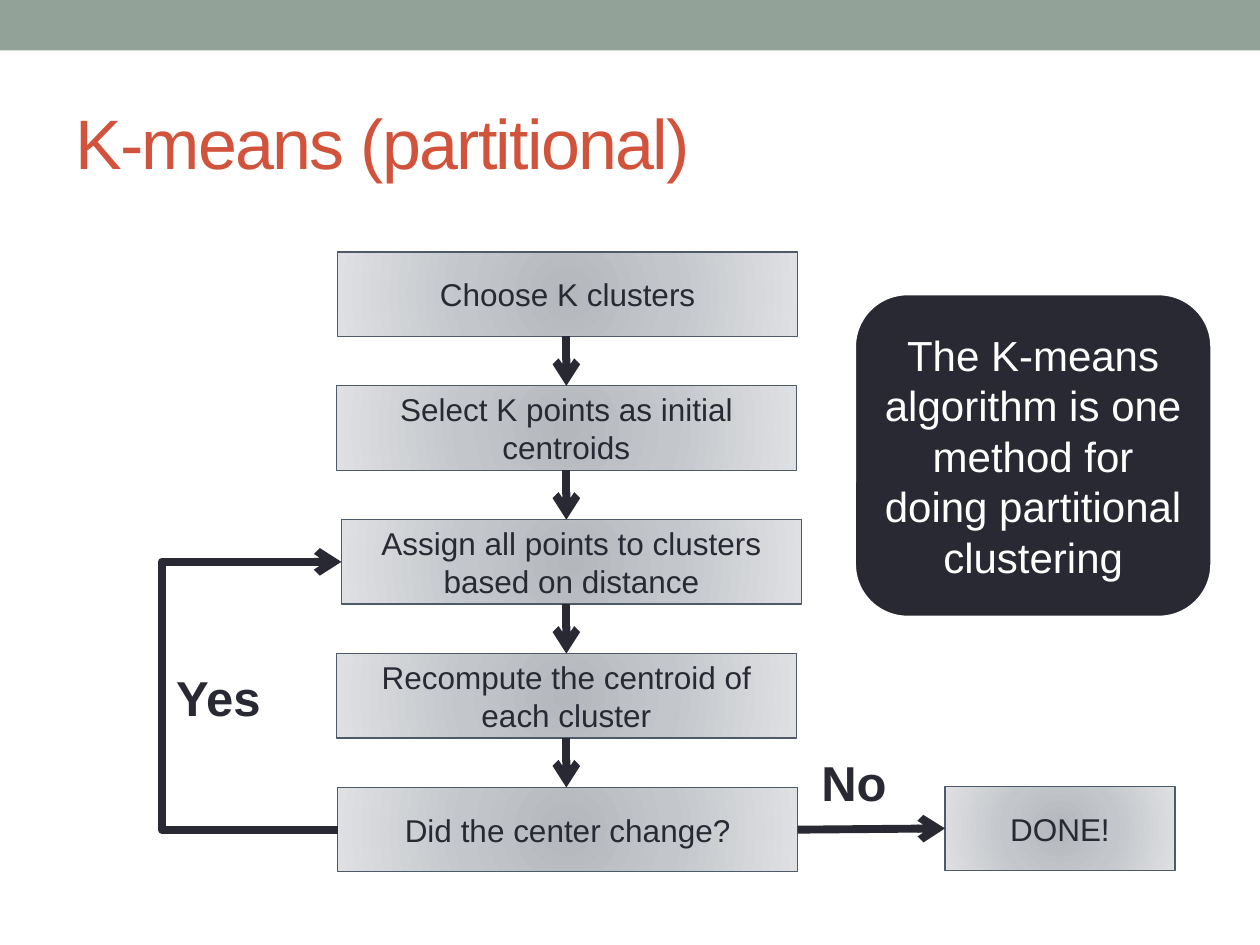
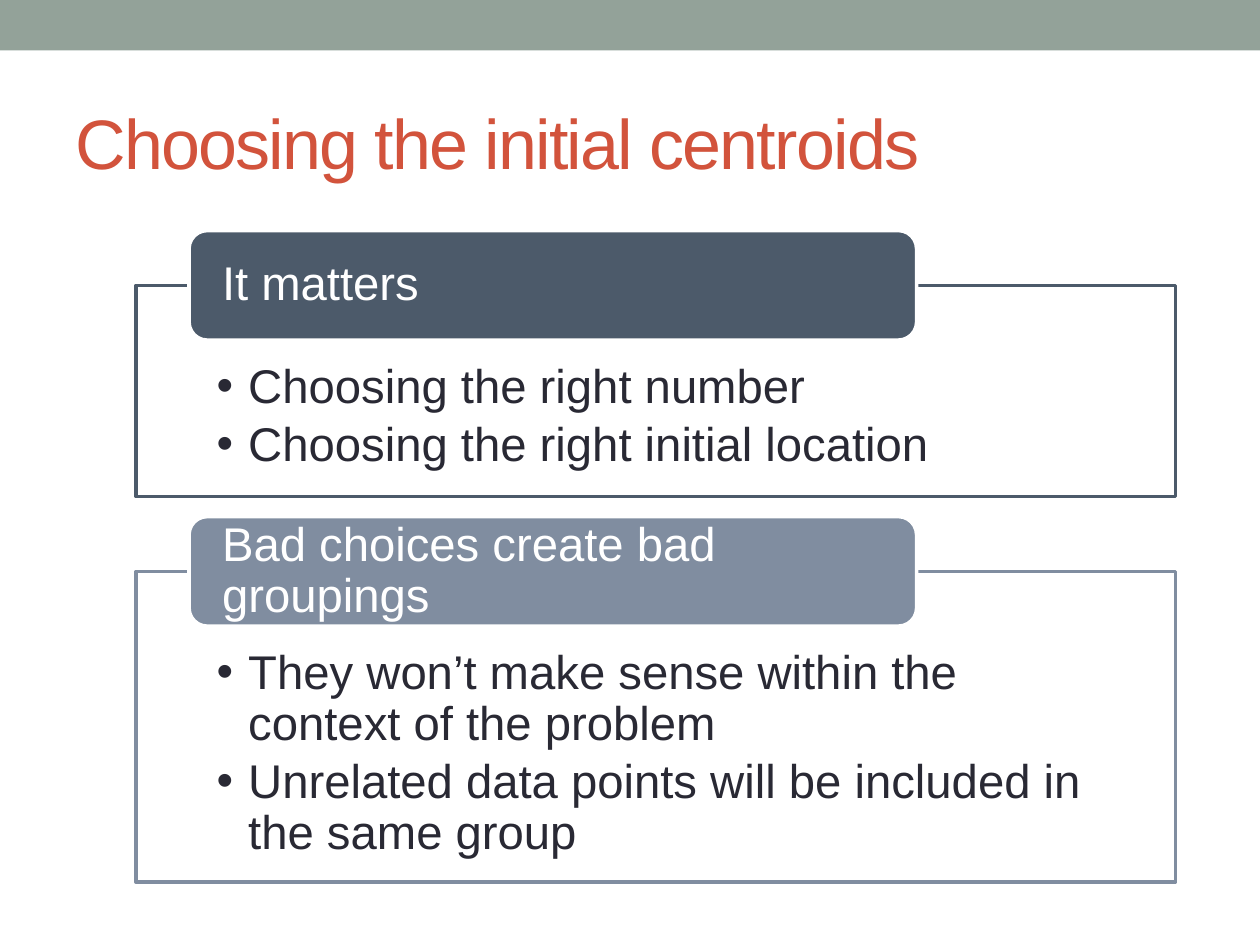
from lxml import etree
from pptx import Presentation
from pptx.dml.color import RGBColor
from pptx.enum.shapes import MSO_CONNECTOR, MSO_SHAPE
from pptx.enum.text import MSO_ANCHOR, PP_ALIGN
from pptx.oxml import parse_xml
from pptx.oxml.ns import nsdecls, qn
from pptx.util import Inches, Pt

RECT, ROUND = MSO_SHAPE.RECTANGLE, MSO_SHAPE.ROUNDED_RECTANGLE
STRAIGHT, ELBOW = MSO_CONNECTOR.STRAIGHT, MSO_CONNECTOR.ELBOW
MIDDLE, TOP = MSO_ANCHOR.MIDDLE, MSO_ANCHOR.TOP
LEFT, CENTER = PP_ALIGN.LEFT, PP_ALIGN.CENTER

WHITE = RGBColor(0xFF, 0xFF, 0xFF)
SAGE = RGBColor(0x93, 0xA2, 0x99)
RUST = RGBColor(0xD2, 0x53, 0x3C)
INK = RGBColor(0x29, 0x29, 0x34)
SLATE = RGBColor(0x4C, 0x5A, 0x6A)
MIST = RGBColor(0x80, 0x8D, 0xA0)
GLOW = [(0, RGBColor(0xB4, 0xB7, 0xBC)), (45, RGBColor(0xC3, 0xC7, 0xCB)),
        (100, RGBColor(0xDF, 0xE0, 0xE3))]

FONT = "Arial"
WIDE, HIGH = Inches(10), Inches(7.5)
COL, ROW = WIDE / 10, HIGH / 7.5  # the grid: 10 columns, 7.5 rows


def place(x, y, *size):
    """Turn columns and rows into slide lengths."""
    spot = (x, y, *size)
    return [round(n * (ROW if i % 2 else COL)) for i, n in enumerate(spot)]


def write(shape, lines, size, color, align=LEFT, anchor=MIDDLE, bold=False):
    frame = shape.text_frame
    frame.word_wrap = True
    frame.vertical_anchor = anchor
    frame.text = "\n".join(lines)
    for para in frame.paragraphs:
        para.alignment = align
        for run in para.runs:
            font = run.font
            font.name, font.size, font.bold = FONT, Pt(size), bold
            font.color.rgb = color
    return frame


def label(slide, box, text, size, color, **style):
    shape = slide.shapes.add_textbox(*place(*box))
    return write(shape, [text], size, color, **style)


def block(slide, kind, box, fill, edge=None, width=0):
    shape = slide.shapes.add_shape(kind, *place(*box))
    shape.shadow.inherit = False
    shape.fill.solid()
    shape.fill.fore_color.rgb = fill
    if edge is None:
        shape.line.fill.background()
    else:
        shape.line.color.rgb = edge
        shape.line.width = Pt(width)
    return shape


def glow(shape):
    """Fill a shape with grey rings, darkest at its centre."""
    stops = "".join(f'<a:gs pos="{at * 1000}"><a:srgbClr val="{tone}"/></a:gs>'
                    for at, tone in GLOW)
    grad = parse_xml(
        f'<a:gradFill {nsdecls("a")} rotWithShape="1"><a:gsLst>{stops}</a:gsLst>'
        '<a:path path="circle"><a:fillToRect l="100000" t="100000" '
        'r="100000" b="100000"/></a:path></a:gradFill>')
    solid = shape.fill._xPr.find(qn("a:solidFill"))
    solid.getparent().replace(solid, grad)


def step(slide, box, text):
    shape = block(slide, RECT, box, WHITE, SLATE, 0.75)
    glow(shape)
    write(shape, [text], 18, INK, CENTER)
    return shape


def arrow(slide, start, end, kind=STRAIGHT):
    line = slide.shapes.add_connector(kind, *place(*start), *place(*end))
    line.line.color.rgb = INK
    line.line.width = Pt(4.5)
    etree.SubElement(line.line._get_or_add_ln(), qn("a:tailEnd"), type="arrow")
    etree.SubElement(line._element.spPr, qn("a:effectLst"))
    return line


def join(slide, first, side, last, goal, kind=STRAIGHT):
    """Draw an arrow from a side of one shape to a side of another."""
    line = arrow(slide, (0, 0), (1, 1), kind)
    line.begin_connect(first, side)
    line.end_connect(last, goal)
    return line


def loop(slide, first, last, turn):
    """Lead back from first to last, turning at the given column."""
    line = join(slide, first, 1, last, 1, ELBOW)
    bend = (turn * COL - line.begin_x) / (line.end_x - line.begin_x)
    guides = line._element.spPr.find(qn("a:prstGeom")).get_or_add_avLst()
    etree.SubElement(guides, qn("a:gd"), name="adj1",
                     fmla=f"val {round(bend * 100000)}")


def base(deck, title):
    """Start a slide with its band and title."""
    slide = deck.slides.add_slide(deck.slide_layouts[6])
    block(slide, RECT, (0, 0, 10, 0.4), SAGE)
    frame = label(slide, (0.5, 0.58, 9, 1.08), title, 40, RUST)
    frame.paragraphs[0].runs[0].font._element.set("spc", "-100")
    return slide


def flow(slide, box, steps):
    """Stack the steps evenly in the box, with arrows between them."""
    x, y, w, h = box
    tall = 0.67
    pitch = (h - tall) / (len(steps) - 1)
    shapes = []
    for i, (shift, text) in enumerate(steps):
        top = y + i * pitch
        shapes.append(step(slide, (x + shift, top, w, tall), text))
        if i:
            mid = x + w / 2
            arrow(slide, (mid, top - pitch + tall), (mid, top))
    done = step(slide, (x + w + 1.18, y + h - tall - 0.01, w / 2, tall), "DONE!")
    join(slide, shapes[-1], 3, done, 1)
    loop(slide, shapes[-1], shapes[2], x - 1.39)
    for text, dx, dy, wide in (("Yes", -1.37, 3.25, 0.88), ("No", 3.75, 3.92, 0.73)):
        frame = label(slide, (x + dx, y + dy, wide, 0.57), text, 28, INK,
                      anchor=TOP, bold=True)
        frame.word_wrap = False


def remark(slide, box, text):
    shape = block(slide, ROUND, box, INK, WHITE, 3.5)
    write(shape, [text], 24, WHITE, CENTER)


def panel(slide, box, tone, head, points):
    """Outline a bullet list, with its heading laid over the top edge."""
    x, y, w, h = box
    tab = 0.87
    frame = block(slide, RECT, (x, y + tab / 2, w, h - tab / 2), WHITE, tone, 2.08)
    body = write(frame, points, 27, INK, anchor=TOP)
    body.margin_left = body.margin_right = Inches(0.64)
    body.margin_top, body.margin_bottom = Inches(0.61), Inches(0.21)
    for para in body.paragraphs:
        para.line_spacing = 0.9
        para.space_after = Pt(4)
        props = para._p.get_or_add_pPr()
        props.set("marL", str(Inches(0.25)))
        props.set("indent", str(-Inches(0.25)))
        etree.SubElement(props, qn("a:buFont"), typeface=FONT)
        etree.SubElement(props, qn("a:buChar"), char="•")
    cap = block(slide, ROUND, (x + 0.42, y, w * 0.7, tab), tone, WHITE, 2.08)
    text = write(cap, [head], 27, WHITE)
    text.margin_left = text.margin_right = Inches(0.22)
    text.margin_top = text.margin_bottom = 0
    text.paragraphs[0].line_spacing = 0.9


def means(deck):
    slide = base(deck, "K-means (partitional)")
    flow(slide, (2.67, 2, 3.65, 4.92), [
        (0.01, "Choose K clusters"),
        (0, "Select K points as initial centroids"),
        (0.04, "Assign all points to clusters based on distance"),
        (0, "Recompute the centroid of each cluster"),
        (0.01, "Did the center change?")])
    remark(slide, (6.77, 2.32, 2.86, 2.59),
           "The K-means algorithm is one method for doing partitional clustering")


def choice(deck):
    slide = base(deck, "Choosing the initial centroids")
    panel(slide, (1.08, 1.83, 8.25, 2.11), SLATE, "It matters",
          ["Choosing the right number", "Choosing the right initial location"])
    panel(slide, (1.08, 4.1, 8.25, 2.9), MIST, "Bad choices create bad groupings",
          ["They won’t make sense within the context of the problem",
           "Unrelated data points will be included in the same group"])


def main():
    deck = Presentation()
    deck.slide_width, deck.slide_height = WIDE, HIGH
    means(deck)
    choice(deck)
    deck.save("out.pptx")


if __name__ == "__main__":
    main()
